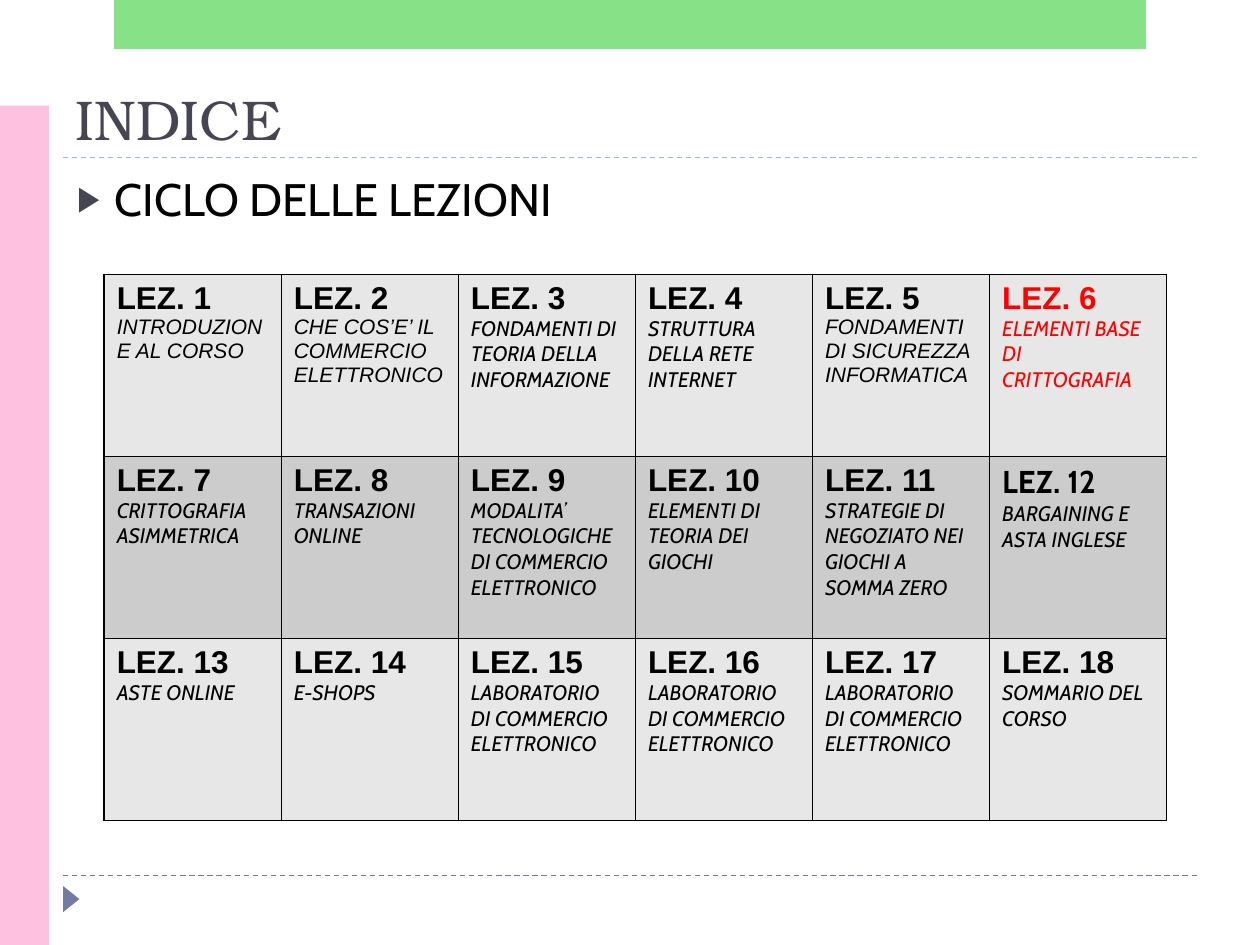
from lxml import etree
from pptx import Presentation
from pptx.dml.color import RGBColor
from pptx.enum.dml import MSO_LINE
from pptx.enum.shapes import MSO_CONNECTOR, MSO_SHAPE
from pptx.enum.text import MSO_ANCHOR, MSO_AUTO_SIZE, PP_ALIGN
from pptx.oxml import parse_xml
from pptx.oxml.ns import nsdecls, qn
from pptx.util import Cm, Pt

DASH = MSO_LINE.DASH
RECT, ARROW = MSO_SHAPE.RECTANGLE, MSO_SHAPE.ISOSCELES_TRIANGLE
LEFT = PP_ALIGN.LEFT
TOP, BOTTOM = MSO_ANCHOR.TOP, MSO_ANCHOR.BOTTOM

BLACK = RGBColor(0x00, 0x00, 0x00)
RED = RGBColor(0xFF, 0x00, 0x00)
SLATE = RGBColor(0x46, 0x46, 0x53)
BLUE = RGBColor(0x72, 0x7C, 0xA3)
PALE = RGBColor(0x9F, 0xB8, 0xCD)
PINK = RGBColor(0xFF, 0xC1, 0xE0)
GREEN = RGBColor(0x62, 0xD8, 0x62)
LIGHT = RGBColor(0xE7, 0xE7, 0xE7)
GREY = RGBColor(0xCC, 0xCC, 0xCC)

SERIF, SANS, PLAIN = "TeX Gyre Bonum", "Cabin", "Arial"

TITLE = "INDICE"
TOPIC = "CICLO DELLE LEZIONI"
LESSONS = [
    "INTRODUZIONE AL CORSO",
    "CHE COS’E’ IL COMMERCIO ELETTRONICO",
    "FONDAMENTI DI TEORIA DELLA INFORMAZIONE",
    "STRUTTURA DELLA RETE INTERNET",
    "FONDAMENTI DI SICUREZZA INFORMATICA",
    "ELEMENTI BASE DI CRITTOGRAFIA",
    "CRITTOGRAFIA ASIMMETRICA",
    "TRANSAZIONI ONLINE",
    "MODALITA’ TECNOLOGICHE DI COMMERCIO ELETTRONICO",
    "ELEMENTI DI TEORIA DEI GIOCHI",
    "STRATEGIE DI NEGOZIATO NEI GIOCHI A SOMMA ZERO",
    "BARGAINING E ASTA INGLESE",
    "ASTE ONLINE",
    "E-SHOPS",
    *["LABORATORIO DI COMMERCIO ELETTRONICO"] * 3,
    "SOMMARIO DEL CORSO",
]
CURRENT = 6
PLAIN_TOPICS = {1, 2, 5}
SANS_HEADS = {12}

ROWS, COLS = 3, 6
CELL_W, CELL_H = 3.57, 3.67
RULES = [(3.18, PALE), (17.65, BLUE)]
# kind, left, top, width, height, colour, turn, opacity in percent
SHAPES = [
    (ARROW, 1.17, 17.96, 0.53, 0.33, BLUE, 90, 100),
    (RECT, 0, 2.13, 0.99, 16.92, PINK, 0, 100),
    (RECT, 2.3, 0, 20.8, 0.99, GREEN, 0, 76),
]


def write(para, text, font=SANS, size=12, color=BLACK, bold=False, italic=False):
    para.alignment = LEFT
    para.space_before = Pt(0)
    run = para.add_run()
    run.text = text
    face = run.font
    face.name, face.size = font, Pt(size)
    face.bold, face.italic = bold, italic
    face.color.rgb = color


def place(holder, left, top, width, height, anchor):
    holder.left, holder.top = Cm(left), Cm(top)
    holder.width, holder.height = Cm(width), Cm(height)
    frame = holder.text_frame
    frame.auto_size = MSO_AUTO_SIZE.NONE
    frame.vertical_anchor = anchor
    return frame.paragraphs[0]


def add_bullet(para, color, size, mark):
    props = para._p.get_or_add_pPr()
    props.set("marL", str(Cm(0.76)))
    props.set("indent", str(-Cm(0.76)))
    para.space_before = Pt(0)
    for xml in (
        f'<a:buClr {nsdecls("a")}><a:srgbClr val="{color}"/></a:buClr>',
        f'<a:buSzPct {nsdecls("a")} val="{size * 1000}"/>',
        f'<a:buChar {nsdecls("a")} char="{mark}"/>',
    ):
        props.append(parse_xml(xml))


def add_rule(slide, y, color):
    rule = slide.shapes.add_connector(
        MSO_CONNECTOR.STRAIGHT, Cm(1.27), Cm(y), Cm(24.13), Cm(y))
    rule.line.color.rgb = color
    rule.line.width = Pt(0.75)
    rule.line.dash_style = DASH
    etree.SubElement(rule._element.spPr, qn("a:effectLst"))


def add_shape(slide, kind, left, top, width, height, color, turn, opacity):
    shape = slide.shapes.add_shape(kind, Cm(left), Cm(top), Cm(width), Cm(height))
    shape.rotation = turn
    shape.shadow.inherit = False
    shape.fill.solid()
    shape.fill.fore_color.rgb = color
    shape.line.fill.background()
    if opacity < 100:
        tint = shape._element.spPr.find(".//" + qn("a:srgbClr"))
        etree.SubElement(tint, qn("a:alpha")).set("val", str(opacity * 1000))


def style_cell(cell, color):
    props = cell._tc.get_or_add_tcPr()
    for side in ("lnL", "lnR", "lnT", "lnB"):
        props.append(parse_xml(
            f'<a:{side} {nsdecls("a")} w="{Pt(1)}"><a:solidFill>'
            f'<a:srgbClr val="{BLACK}"/></a:solidFill></a:{side}>'))
    cell.fill.solid()
    cell.fill.fore_color.rgb = color


def add_lessons(slide):
    table = slide.shapes.add_table(
        ROWS, COLS, Cm(2.1), Cm(5.53), Cm(CELL_W * COLS), Cm(CELL_H * ROWS)).table
    for col in table.columns:
        col.width = Cm(CELL_W)
    for row in table.rows:
        row.height = Cm(CELL_H)
    for num, topic in enumerate(LESSONS, 1):
        row, col = divmod(num - 1, COLS)
        cell = table.cell(row, col)
        style_cell(cell, GREY if row % 2 else LIGHT)
        color = RED if num == CURRENT else BLACK
        frame = cell.text_frame
        write(frame.paragraphs[0], f"LEZ. {num}", size=18, bold=True, color=color,
              font=SANS if num in SANS_HEADS else PLAIN)
        write(frame.add_paragraph(), topic, italic=True, color=color,
              font=PLAIN if num in PLAIN_TOPICS else SANS)


def main():
    deck = Presentation()
    deck.slide_width, deck.slide_height = Cm(25.4), Cm(19.05)
    slide = deck.slides.add_slide(deck.slide_layouts[1])
    for rule in RULES:
        add_rule(slide, *rule)
    for shape in SHAPES:
        add_shape(slide, *shape)
    title, body = slide.placeholders
    write(place(title, 1.27, 1.4, 22.86, 1.78, BOTTOM), TITLE,
          font=SERIF, size=32, color=SLATE)
    para = place(body, 1.3, 3.33, 22.86, 2, TOP)
    add_bullet(para, SLATE, 76, "▶")
    write(para, TOPIC, size=26)
    add_lessons(slide)
    deck.save("out.pptx")


if __name__ == "__main__":
    main()
